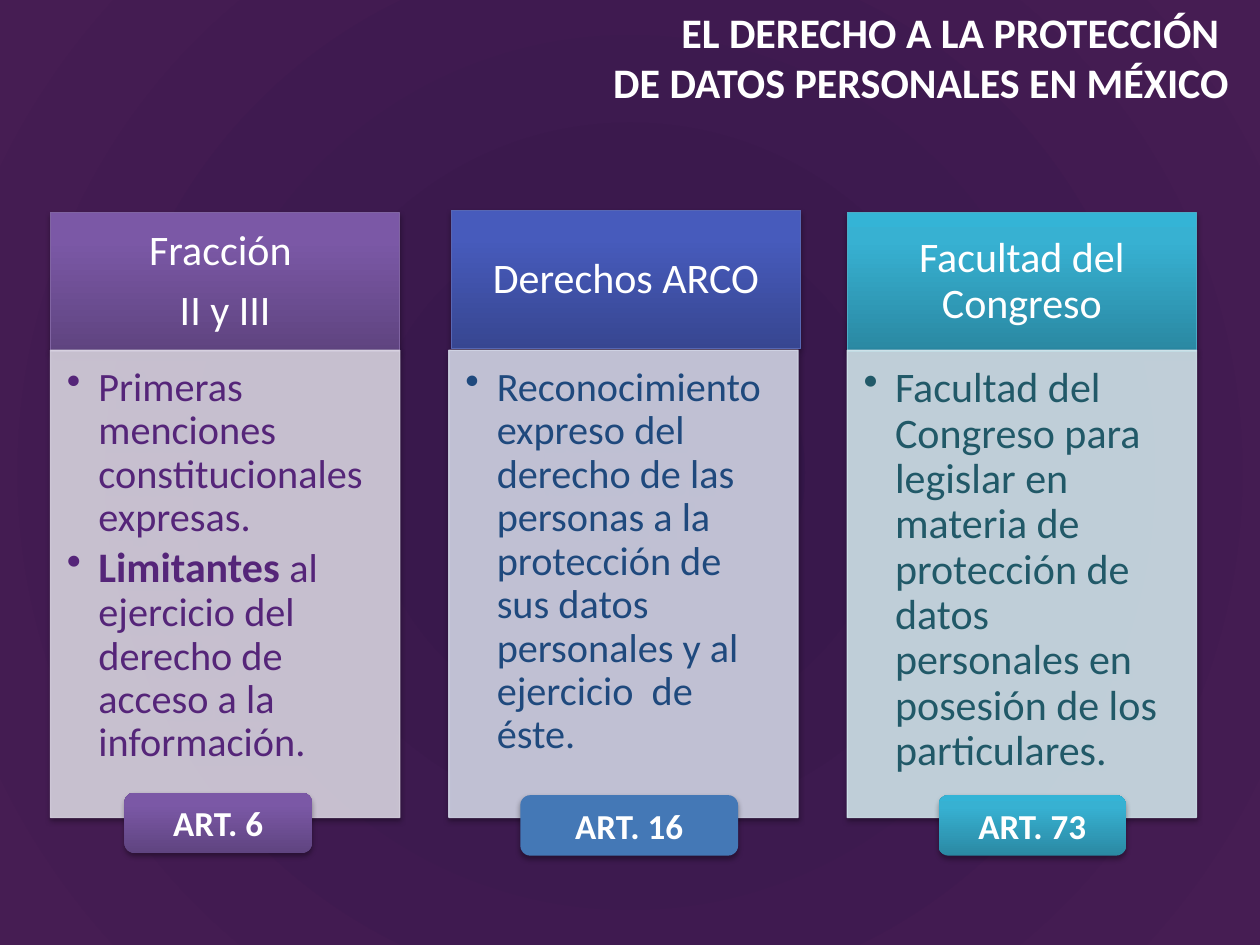
from dataclasses import dataclass

from lxml import etree
from pptx import Presentation
from pptx.dml.color import RGBColor
from pptx.enum.shapes import MSO_SHAPE
from pptx.enum.text import MSO_ANCHOR, MSO_AUTO_SIZE, PP_ALIGN
from pptx.oxml.ns import qn
from pptx.util import Cm, Pt

RECT, ROUNDED = MSO_SHAPE.RECTANGLE, MSO_SHAPE.ROUNDED_RECTANGLE
TOP, MIDDLE = MSO_ANCHOR.TOP, MSO_ANCHOR.MIDDLE
LEFT, CENTER, RIGHT = PP_ALIGN.LEFT, PP_ALIGN.CENTER, PP_ALIGN.RIGHT
GROW = MSO_AUTO_SIZE.SHAPE_TO_FIT_TEXT


@dataclass(frozen=True)
class Theme:
    font: str = "Calibri"
    white: str = "FFFFFF"
    shadow: str = "000000"
    background: tuple = ((0, "34164A"), (100, "461D53"))
    purple: tuple = ((0, "5F4480"), (80, "7B58A6"), (100, "7C57A8"))
    blue: tuple = ((0, "374691"), (80, "475BBC"), (100, "455ABF"))
    teal: tuple = ((0, "2A88A2"), (80, "37B1D2"), (100, "34B4D6"))
    badge_blue: str = "4478B6"
    heading: int = 24
    body: int = 23
    badge: int = 20


THEME = Theme()

# Column geometry in centimetres
COLUMN_LEFT, COLUMN_STEP, COLUMN_WIDTH = 1.02, 8.03, 7.04
HEADER_TOP, HEADER_HEIGHT = 4.29, 2.79
BODY_TOP, BODY_HEIGHT = 7.06, 9.42
BADGE_HEIGHT = 1.22
HEADER_INSETS = (0.48, 0.28, 0.48, 0.28)
BODY_INSETS = (0.33, 0.33, 0.46, 0.51)

# Heading paragraphs, heading shift (x, y), header fill and line, body fill,
# body text colour, body paragraphs of (text, size, bold) runs,
# badge text, badge box (left, top, width), badge fill
COLUMNS = [
    (["Fracción ", "II y III"], (0, 0), THEME.purple, "8064A2", "D8D3E0", "552579",
     [[("Primeras menciones constitucionales expresas.", THEME.body, False)],
      [("Limitantes ", THEME.heading, True),
       ("al ejercicio del derecho de acceso a la información.", THEME.body, False)]],
     "ART. 6", (2.51, 15.98, 3.78), THEME.purple),
    (["Derechos ARCO"], (0.05, -0.05), THEME.blue, "5767B4", "D1D4E5", "1F497D",
     [[("Reconocimiento expreso del derecho de las personas a la protección de "
        "sus datos personales y al ejercicio  de éste.", THEME.body, False)]],
     "ART. 16", (10.49, 16.03, 4.39), THEME.badge_blue),
    (["Facultad del Congreso"], (0, 0), THEME.teal, "4BACC6", "D0E3EA", "215968",
     [[("Facultad del Congreso para legislar en materia de protección de datos "
        "personales en posesión de los particulares.", THEME.heading, False)]],
     "ART. 73", (18.92, 16.03, 3.78), THEME.teal),
]


def add_color(parent, color, alpha=None):
    node = etree.SubElement(parent, qn("a:srgbClr"), val=color)
    if alpha is not None:
        etree.SubElement(node, qn("a:alpha"), val=str(alpha * 1000))


def set_gradient(fill, owner, stops, radial=False):
    """Replace the owner's fill with a radial or an upward linear gradient."""
    fill.solid()
    gradient = etree.Element(qn("a:gradFill"), rotWithShape="1")
    stop_list = etree.SubElement(gradient, qn("a:gsLst"))
    for position, color in stops:
        add_color(etree.SubElement(stop_list, qn("a:gs"), pos=str(position * 1000)), color)
    if radial:
        center = etree.SubElement(gradient, qn("a:path"), path="circle")
        etree.SubElement(center, qn("a:fillToRect"), l="50000", t="50000",
                         r="50000", b="50000")
    else:
        etree.SubElement(gradient, qn("a:lin"), ang="16200000", scaled="0")
    owner.replace(owner.find(qn("a:solidFill")), gradient)


def add_shadow(panel):
    panel.shadow.inherit = False
    effects = panel.element.spPr.find(qn("a:effectLst"))
    shadow = etree.SubElement(effects, qn("a:outerShdw"), blurRad=str(Pt(3.1)),
                              dist=str(Pt(1.8)), dir="5400000", rotWithShape="0")
    add_color(shadow, THEME.shadow, 35)


def add_panel(slide, kind, box, fill, line=None, alpha=None):
    panel = slide.shapes.add_shape(kind, *map(Cm, box))
    properties = panel.element.spPr
    if isinstance(fill, tuple):
        set_gradient(panel.fill, properties, fill)
    else:
        panel.fill.solid()
        panel.fill.fore_color.rgb = RGBColor.from_string(fill)
    if line:
        panel.line.color.rgb = RGBColor.from_string(line)
        panel.line.width = Pt(0.75)
    else:
        panel.line.fill.background()
    if alpha is not None:
        for solid in properties.iter(qn("a:solidFill")):
            etree.SubElement(solid[0], qn("a:alpha"), val=str(alpha * 1000))
    add_shadow(panel)
    return panel


def add_bullet(paragraph):
    properties = paragraph._p.get_or_add_pPr()
    properties.set("marL", str(Cm(0.635)))
    properties.set("indent", str(-Cm(0.635)))
    etree.SubElement(properties, qn("a:buChar"), char="•")


def write_text(holder, paragraphs, color, align, anchor=TOP, insets=None,
               spacing=None, after=0, bullets=False):
    """Fill a shape with paragraphs made of (text, size, bold) runs."""
    frame = holder.text_frame
    frame.word_wrap = True
    frame.vertical_anchor = anchor
    if insets:
        (frame.margin_left, frame.margin_top,
         frame.margin_right, frame.margin_bottom) = map(Cm, insets)
    for index, runs in enumerate(paragraphs):
        paragraph = frame.add_paragraph() if index else frame.paragraphs[0]
        paragraph.alignment = align
        if spacing:
            paragraph.line_spacing = spacing
            paragraph.space_after = Pt(after)
        if bullets:
            paragraph.level = 1
            add_bullet(paragraph)
        for text, size, bold in runs:
            run = paragraph.add_run()
            run.text = text
            run.font.name = THEME.font
            run.font.size = Pt(size)
            run.font.bold = bold
            run.font.color.rgb = RGBColor.from_string(color)


def add_title(slide):
    title = slide.shapes.add_textbox(Cm(4.57), Cm(0), Cm(20.45), Cm(2.31))
    lines = ["EL DERECHO A LA PROTECCIÓN ", "DE DATOS PERSONALES EN MÉXICO"]
    write_text(title, [[(line, THEME.heading, True)] for line in lines],
               THEME.white, RIGHT)
    title.text_frame.auto_size = GROW


def add_column(slide, left, column):
    headings, (dx, dy), header_fill, line, body_fill, ink, points, *_ = column
    header = add_panel(slide, RECT, (left + dx, HEADER_TOP + dy, COLUMN_WIDTH,
                                     HEADER_HEIGHT), header_fill, line)
    write_text(header, [[(text, THEME.heading, False)] for text in headings],
               THEME.white, CENTER, MIDDLE, HEADER_INSETS, 0.9, 8.4)
    body = add_panel(slide, RECT, (left, BODY_TOP, COLUMN_WIDTH, BODY_HEIGHT),
                     body_fill, body_fill, 90)
    write_text(body, points, ink, LEFT, TOP, BODY_INSETS, 0.9, 3.5, bullets=True)


def add_badge(slide, label, box, fill):
    badge = add_panel(slide, ROUNDED, (*box, BADGE_HEIGHT), fill)
    write_text(badge, [[(label, THEME.badge, True)]], THEME.white, CENTER)


def main():
    deck = Presentation()
    deck.slide_width, deck.slide_height = Cm(25.4), Cm(19.05)
    slide = deck.slides.add_slide(deck.slide_layouts[6])

    # Background and title
    background = slide.background.fill
    background.solid()
    set_gradient(background, slide.element.find(".//" + qn("p:bgPr")),
                 THEME.background, radial=True)
    add_title(slide)

    # Columns, then the article badges over their lower edges
    for index, column in enumerate(COLUMNS):
        add_column(slide, COLUMN_LEFT + index * COLUMN_STEP, column)
    for column in COLUMNS:
        add_badge(slide, *column[-3:])

    deck.save("out.pptx")


if __name__ == "__main__":
    main()
